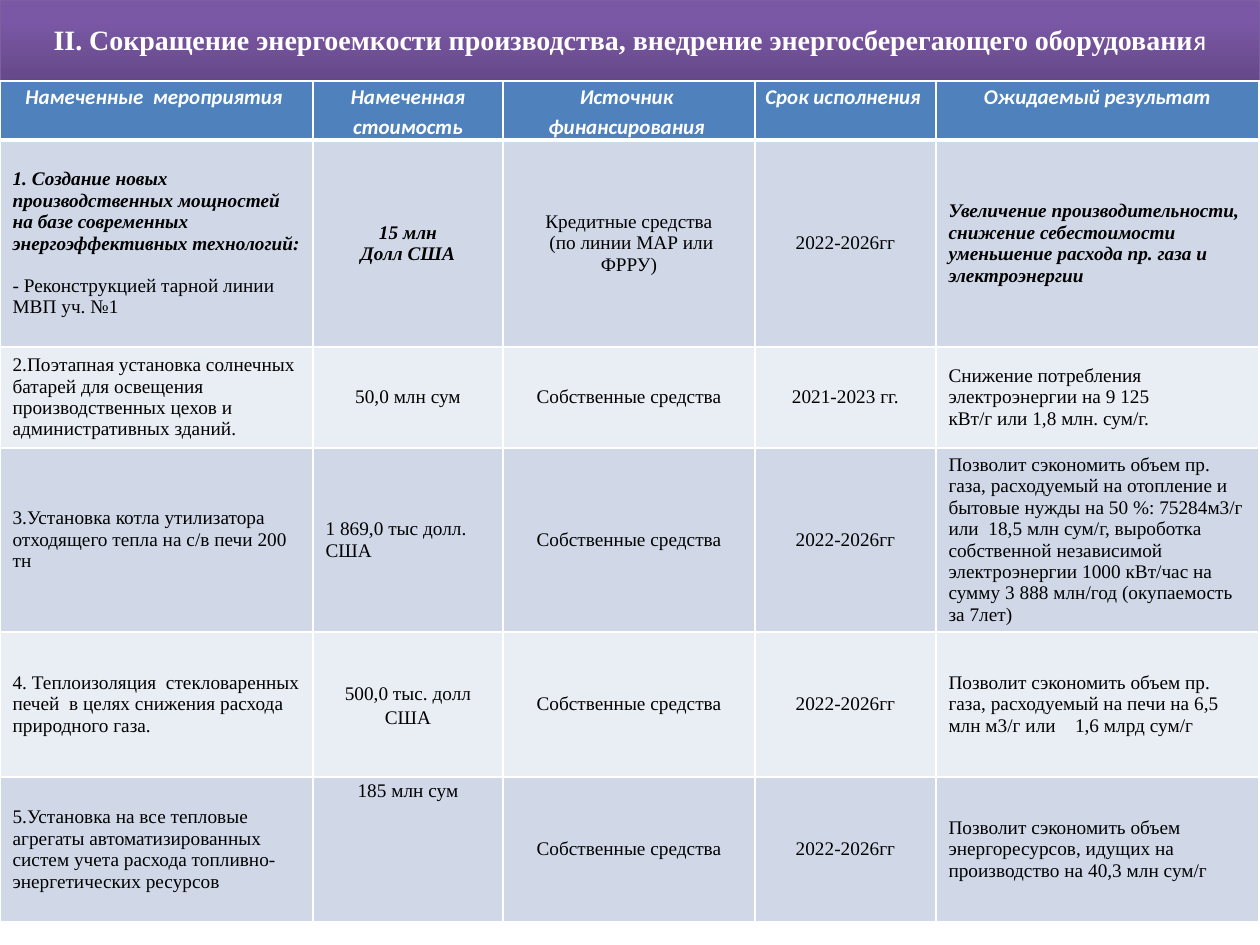
"""Builds a slide with a table of energy-saving measures, costs and results."""
from dataclasses import dataclass

from pptx import Presentation
from pptx.dml.color import RGBColor
from pptx.enum.shapes import MSO_SHAPE
from pptx.enum.text import MSO_ANCHOR, PP_ALIGN
from pptx.oxml import parse_xml
from pptx.util import Pt

RECTANGLE = MSO_SHAPE.RECTANGLE
TOP, MIDDLE = MSO_ANCHOR.TOP, MSO_ANCHOR.MIDDLE
LEFT, CENTER = PP_ALIGN.LEFT, PP_ALIGN.CENTER
PX = 914400 / 126
NS = 'xmlns:a="http://schemas.openxmlformats.org/drawingml/2006/main"'


@dataclass(frozen=True)
class Theme:
    white: str = "FFFFFF"
    black: str = "000000"
    header: str = "4F81BD"
    bands: tuple = ("D0D8E8", "E9EDF4")
    title_line: str = "7D60A0"
    title_stops: tuple = ((0, "5F4480"), (80, "7B58A6"), (100, "7C57A8"))
    serif: str = "Times New Roman"
    sans: str = "Calibri"
    title_size: int = 16
    header_size: int = 12
    body_size: int = 11
    thin: int = 1
    thick: int = 3


THEME = Theme()
COLUMNS = [313, 190, 252, 181, 323]
ROWS = [55, 207, 101, 145, 145, 145]
TITLE = [
    ("II. Сокращение энергоемкости производства, внедрение энергосберегающего оборудовани",
     {"name": THEME.serif, "bold": True}),
    ("я", {"name": THEME.sans, "bold": False}),
]
OWN_FUNDS = "Собственные средства"
PERIOD = "2022-2026гг"
HEADINGS = ["Намеченные  мероприятия ", "Намеченная\nстоимость",
            "Источник  финансирования ", "Срок исполнения ", "Ожидаемый результат"]
MEASURES = [
    ["*1. Создание новых производственных мощностей на базе современных "
     "энергоэффективных технологий:\n- Реконструкцией тарной линии МВП уч. №1",
     "*15 млн\n*Долл США",
     "Кредитные средства\n (по линии МАР или ФРРУ)", PERIOD,
     "*Увеличение производительности, снижение себестоимости\n"
     "*уменьшение расхода пр. газа и электроэнергии"],
    ["2.Поэтапная установка солнечных батарей для освещения производственных цехов "
     "и административных зданий.",
     "50,0 млн сум", OWN_FUNDS, "2021-2023 гг.",
     "Снижение потребления электроэнергии на 9 125\nкВт/г или 1,8 млн. сум/г."],
    ["3.Установка котла утилизатора отходящего тепла на с/в печи 200 тн",
     "1 869,0 тыс долл. США", OWN_FUNDS, PERIOD,
     "Позволит сэкономить объем пр. газа, расходуемый на отопление и бытовые нужды "
     "на 50 %: 75284м3/г или  18,5 млн сум/г, выроботка собственной независимой "
     "электроэнергии 1000 кВт/час на сумму 3 888 млн/год (окупаемость за 7лет)"],
    ["4. Теплоизоляция  стекловаренных печей  в целях снижения расхода природного газа.",
     "500,0 тыс. долл США", OWN_FUNDS, PERIOD,
     "Позволит сэкономить объем пр. газа, расходуемый на печи на 6,5 млн м3/г "
     "или    1,6 млрд сум/г"],
    ["5.Установка на все тепловые агрегаты автоматизированных систем учета расхода "
     "топливно-энергетических ресурсов",
     "185 млн сум", OWN_FUNDS, PERIOD,
     "Позволит сэкономить объем энергоресурсов, идущих на производство на 40,3 млн сум/г"],
]
TIGHT = {"margin_left": 9, "margin_right": 9, "margin_top": 0, "margin_bottom": 0}
LOOSE = {"line_spacing": 1.15}
SPECIAL = {
    (3, 1): {"para": {"alignment": LEFT}},
    (4, 1): {"para": LOOSE, "margins": TIGHT},
    (5, 1): {"para": LOOSE, "margins": TIGHT, "anchor": TOP},
}


def px(value):
    return round(value * PX)


def apply(target, values):
    for name, value in values.items():
        setattr(target, name, value)


class SlideWriter:
    def __init__(self, page, theme):
        self.page = page
        self.theme = theme

    def span(self, para, text, color, size, **font):
        span = para.add_run()
        span.text = text
        apply(span.font, {"size": Pt(size), **font})
        span.font.color.rgb = RGBColor.from_string(color)

    def title(self, left, top, width, height, spans):
        theme = self.theme
        box = self.page.shapes.add_shape(RECTANGLE, px(left), px(top), px(width), px(height))
        box.line.color.rgb = RGBColor.from_string(theme.title_line)
        box.line.width = Pt(0.75)
        stops = "".join(f'<a:gs pos="{pos * 1000}"><a:srgbClr val="{color}"/></a:gs>'
                        for pos, color in theme.title_stops)
        properties = box.line._ln.getparent()
        properties.insert(2, parse_xml(
            f'<a:gradFill {NS} rotWithShape="1"><a:gsLst>{stops}</a:gsLst>'
            '<a:lin ang="16200000" scaled="0"/></a:gradFill>'))
        properties.append(parse_xml(
            f'<a:effectLst {NS}><a:outerShdw blurRad="39370" dist="22860" dir="5400000" '
            f'rotWithShape="0"><a:srgbClr val="{theme.black}"><a:alpha val="35000"/>'
            '</a:srgbClr></a:outerShdw></a:effectLst>'))
        apply(box.text_frame, {"word_wrap": True, "vertical_anchor": TOP, "margin_top": px(23)})
        para = box.text_frame.paragraphs[0]
        para.alignment = CENTER
        for text, font in spans:
            self.span(para, text, theme.white, theme.title_size, **font)

    def table(self, left, top, columns, rows):
        frame = self.page.shapes.add_table(len(rows), len(columns), px(left), px(top),
                                           px(sum(columns)), px(sum(rows)))
        for lines, field, sizes in ((frame.table.columns, "width", columns),
                                    (frame.table.rows, "height", rows)):
            for line, size in zip(lines, sizes):
                setattr(line, field, px(size))
        return frame.table

    def borders(self, cell, widths):
        properties = cell._tc.get_or_add_tcPr()
        for index, (side, width) in enumerate(zip("LRTB", widths)):
            properties.insert(index, parse_xml(
                f'<a:ln{side} {NS} w="{Pt(width)}"><a:solidFill>'
                f'<a:srgbClr val="{self.theme.white}"/></a:solidFill></a:ln{side}>'))

    def cell(self, cell, text, fill, font, para_format, anchor=MIDDLE, margins=None):
        cell.fill.solid()
        cell.fill.fore_color.rgb = RGBColor.from_string(fill)
        cell.vertical_anchor = anchor
        apply(cell, {name: px(value) for name, value in (margins or {}).items()})
        for index, line in enumerate(text.split("\n")):
            frame = cell.text_frame
            para = frame.add_paragraph() if index else frame.paragraphs[0]
            apply(para, para_format)
            if line.startswith("- "):
                para.space_before = Pt(12)
            strong = line.startswith("*")
            self.span(para, line.removeprefix("*"),
                      **{"bold": strong, "italic": strong, **font})
            if font.get("bold"):
                apply(para.runs[0].font, {"bold": True, "italic": True})

    def measures(self, table, headings, measures):
        theme = self.theme
        heading_font = {"name": theme.sans, "size": theme.header_size, "color": theme.white,
                        "bold": True, "italic": True}
        body_font = {"name": theme.serif, "size": theme.body_size, "color": theme.black}
        for column, text in enumerate(headings):
            cell = table.cell(0, column)
            self.cell(cell, text, theme.header, heading_font,
                      {"alignment": CENTER, **LOOSE}, TOP, TIGHT)
            self.borders(cell, (theme.thin, theme.thin, theme.thin, theme.thick))
        for row, texts in enumerate(measures, 1):
            upper = theme.thick if row == 1 else theme.thin
            for column, text in enumerate(texts):
                cell = table.cell(row, column)
                special = dict(SPECIAL.get((row, column), {}))
                alignment = LEFT if column in (0, len(texts) - 1) else CENTER
                para_format = {"alignment": alignment, **special.pop("para", {})}
                self.cell(cell, text, theme.bands[(row - 1) % 2], body_font,
                          para_format, **special)
                self.borders(cell, (theme.thin, theme.thin, upper, theme.thin))


def main():
    deck = Presentation()
    deck.slide_width, deck.slide_height = px(1260), px(945)
    writer = SlideWriter(deck.slides.add_slide(deck.slide_layouts[6]), THEME)
    writer.title(0, 0, 1260, 97, TITLE)
    writer.measures(writer.table(0, 81, COLUMNS, ROWS), HEADINGS, MEASURES)
    deck.save("out.pptx")


if __name__ == "__main__":
    main()
